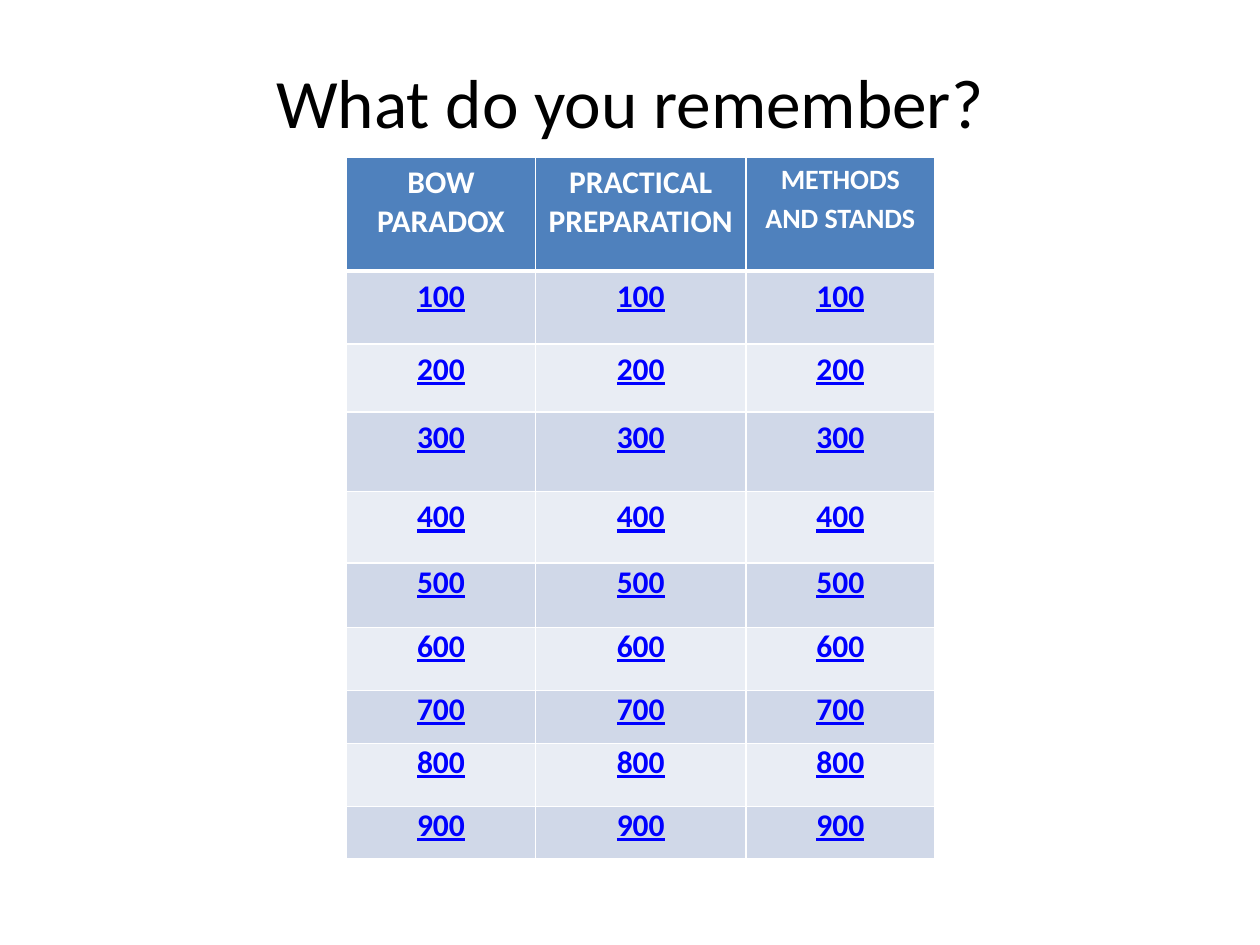
from lxml import etree
from pptx import Presentation
from pptx.dml.color import RGBColor
from pptx.enum import text
from pptx.oxml import ns
from pptx.util import Inches, Pt

HEADS = ["BOW PARADOX", "PRACTICAL PREPARATION", "METHODS AND STANDS"]
WIDTHS = [1.5, 1.67, 1.5]
HEIGHTS = [0.9, 0.58, 0.54, 0.63, 0.57, 0.51, 0.5, 0.42, 0.5, 0.42]
BANDS = ["E9EDF4", "D0D8E8"]


def color(code):
    return RGBColor.from_string(code)


def style(par, size, code, bold=False, line=False):
    par.alignment = text.PP_ALIGN.CENTER
    for run in par.runs:
        font = run.font
        font.name = "Calibri"
        font.size = Pt(size)
        font.bold = bold
        font.underline = line
        font.color.rgb = color(code)


def add_title(slide, words):
    box = slide.shapes.add_textbox(Inches(0.5), Inches(0.5), Inches(9), Inches(0.6))
    frame = box.text_frame
    frame.word_wrap = True
    frame.vertical_anchor = text.MSO_ANCHOR.MIDDLE
    frame.text = words
    style(frame.paragraphs[0], 39.6, "000000")


def set_edges(cell, top, base):
    """Draw white borders, with top and base widths in points."""
    props = cell._tc.get_or_add_tcPr()
    edges = [("L", 1), ("R", 1), ("T", top), ("B", base)]
    for spot, (side, width) in enumerate(edges):
        edge = etree.Element(ns.qn(f"a:ln{side}"), w=str(Pt(width)))
        fill = etree.SubElement(edge, ns.qn("a:solidFill"))
        etree.SubElement(fill, ns.qn("a:srgbClr"), val="FFFFFF")
        props.insert(spot, edge)


def set_cell(cell, words, fill, size, code, line=False, tight=False):
    cell.fill.solid()
    cell.fill.fore_color.rgb = color(fill)
    if tight:
        cell.margin_left = cell.margin_right = Inches(0.07)
        cell.margin_top = cell.margin_bottom = 0
    cell.text_frame.text = words
    style(cell.text_frame.paragraphs[0], size, code, True, line)


def add_board(slide):
    frame = slide.shapes.add_table(
        len(HEIGHTS), len(HEADS), Inches(2.75), Inches(1.25),
        Inches(sum(WIDTHS)), Inches(sum(HEIGHTS)))
    table = frame.table
    for col, width in zip(table.columns, WIDTHS):
        col.width = Inches(width)
    for row, height in zip(table.rows, HEIGHTS):
        row.height = Inches(height)

    for col, head in enumerate(HEADS):
        last = col == len(HEADS) - 1
        cell = table.cell(0, col)
        set_cell(cell, head, "4F81BD", 16 if last else 18, "FFFFFF", tight=last)
        if last:
            cell.text_frame.paragraphs[0].line_spacing = 1.15
        set_edges(cell, 1, 3)
        for row in range(1, len(HEIGHTS)):
            cell = table.cell(row, col)
            set_cell(cell, str(row * 100), BANDS[row % 2], 18, "0000FF",
                     line=True, tight=row >= 5)
            set_edges(cell, 3 if row == 1 else 1, 1)


def main():
    deck = Presentation()
    deck.slide_width, deck.slide_height = Inches(10), Inches(7.5)
    slide = deck.slides.add_slide(deck.slide_layouts[6])
    add_title(slide, "What do you remember?")
    add_board(slide)
    deck.save("out.pptx")


if __name__ == "__main__":
    main()
